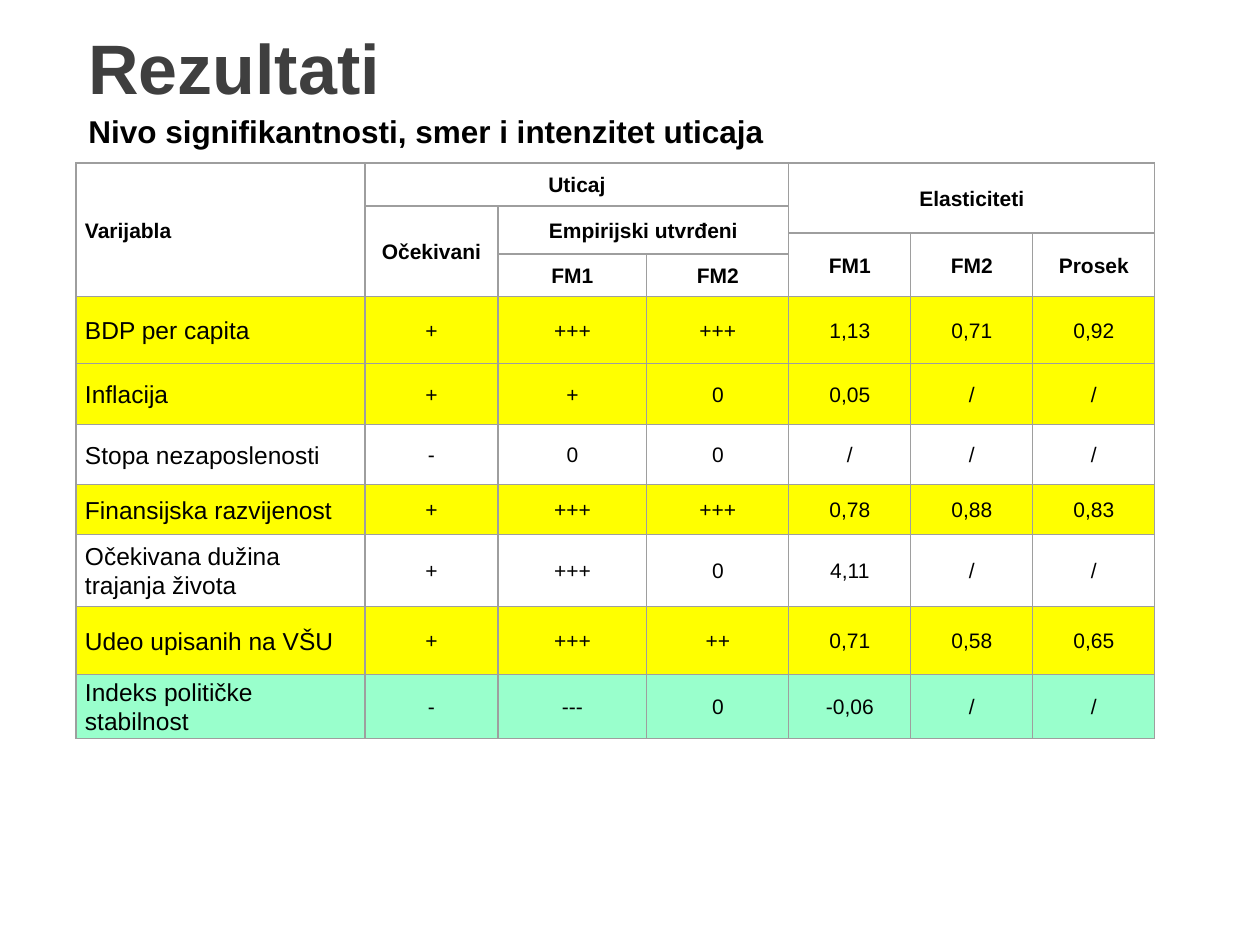
from itertools import product

from lxml.etree import SubElement
from pptx import Presentation
from pptx.dml.color import RGBColor
from pptx.enum.text import MSO_ANCHOR, PP_ALIGN
from pptx.oxml.ns import qn
from pptx.util import Pt

PX = 7257  # EMU per px, 126 px to the inch
COLORS = {
    "title": "3F3F3F", "text": "000000", "border": "9E9E9E",
    "plain": "FFFFFF", "both": "FFFF00", "partial": "99FFCC",
}

# Content: text, left, top, width, height, size, colour
HEADINGS = [
    ("Rezultati", 76, 18, 1068, 145, 40, "title"),
    ("Nivo signifikantnosti, smer i intenzitet uticaja", 76, 106, 1176, 50, 18, "text"),
]

# Header cells: text, row, column, rows spanned, columns spanned
HEADER = [
    ("Varijabla", 0, 0, 4, 1),
    ("Uticaj", 0, 1, 1, 3),
    ("Elasticiteti", 0, 4, 2, 3),
    ("Očekivani", 1, 1, 3, 1),
    ("Empirijski utvrđeni", 1, 2, 2, 2),
    ("FM1", 2, 4, 2, 1),
    ("FM2", 2, 5, 2, 1),
    ("Prosek", 2, 6, 2, 1),
    ("FM1", 3, 2, 1, 1),
    ("FM2", 3, 3, 1, 1),
]
HEADER_HEIGHTS = [43, 27, 21, 43]

# Result rows: fill, height, cells
RESULTS = [
    ("both", 67, ["BDP per capita", "+", "+++", "+++", "1,13", "0,71", "0,92"]),
    ("both", 61, ["Inflacija", "+", "+", "0", "0,05", "/", "/"]),
    ("plain", 60, ["Stopa nezaposlenosti", "-", "0", "0", "/", "/", "/"]),
    ("both", 50, ["Finansijska razvijenost", "+", "+++", "+++", "0,78", "0,88", "0,83"]),
    ("plain", 72, ["Očekivana dužina trajanja života", "+", "+++", "0", "4,11", "/", "/"]),
    ("both", 68, ["Udeo upisanih na VŠU", "+", "+++", "++", "0,71", "0,58", "0,65"]),
    ("partial", 64, ["Indeks političke stabilnost", "-", "---", "0", "-0,06", "/", "/"]),
]
COLUMN_WIDTHS = [289, 133, 149, 142, 122, 122, 122]
TABLE_LEFT, TABLE_TOP = 76, 163


def px(length):
    return length * PX


def rgb(name):
    return RGBColor.from_string(COLORS[name])


def write(paragraph, text, size, color="text", bold=False):
    run = paragraph.add_run()
    run.text = text
    run.font.color.rgb = rgb(color)
    for attribute, value in {"name": "Arial", "size": Pt(size), "bold": bold}.items():
        setattr(run.font, attribute, value)


def style_cell(cell, fill):
    margins = {"margin_left": px(9), "margin_right": px(9),
               "margin_top": 0, "margin_bottom": 0}
    for attribute, value in {**margins, "vertical_anchor": MSO_ANCHOR.MIDDLE}.items():
        setattr(cell, attribute, value)
    properties = cell._tc.get_or_add_tcPr()
    for side in ("lnL", "lnR", "lnT", "lnB"):
        line = SubElement(properties, qn(f"a:{side}"), w=str(Pt(0.75)))
        solid = SubElement(line, qn("a:solidFill"))
        SubElement(solid, qn("a:srgbClr"), val=COLORS["border"])
    cell.fill.solid()
    cell.fill.fore_color.rgb = rgb(fill)


def fill_cell(cell, text, column, size=12, bold=False):
    paragraph = cell.text_frame.paragraphs[0]
    paragraph.alignment = PP_ALIGN.CENTER if column else PP_ALIGN.LEFT
    paragraph.line_spacing = 1.07
    write(paragraph, text, size, bold=bold)


presentation = Presentation()
presentation.slide_width, presentation.slide_height = px(1260), px(945)
slide = presentation.slides.add_slide(presentation.slide_layouts[6])

# Title and subtitle
for text, left, top, width, height, size, color in HEADINGS:
    heading = slide.shapes.add_textbox(px(left), px(top), px(width), px(height))
    heading.text_frame.word_wrap = True
    write(heading.text_frame.paragraphs[0], text, size, color, bold=True)

# Table grid
heights = HEADER_HEIGHTS + [height for _, height, _ in RESULTS]
fills = ["plain"] * len(HEADER_HEIGHTS) + [fill for fill, _, _ in RESULTS]
table = slide.shapes.add_table(
    len(heights), len(COLUMN_WIDTHS), px(TABLE_LEFT), px(TABLE_TOP),
    px(sum(COLUMN_WIDTHS)), px(sum(heights))).table
table.first_row = table.horz_banding = False
for column, width in zip(table.columns, COLUMN_WIDTHS):
    column.width = px(width)
for row, height in zip(table.rows, heights):
    row.height = px(height)
for row, column in product(range(len(heights)), range(len(COLUMN_WIDTHS))):
    style_cell(table.cell(row, column), fills[row])

# Header
for text, row, column, row_span, column_span in HEADER:
    cell = table.cell(row, column)
    if row_span * column_span > 1:
        cell.merge(table.cell(row + row_span - 1, column + column_span - 1))
    fill_cell(cell, text, column, bold=True)

# Results
for row, (_, _, values) in enumerate(RESULTS, len(HEADER_HEIGHTS)):
    for column, value in enumerate(values):
        fill_cell(table.cell(row, column), value, column, size=12 if column else 14)

presentation.save("out.pptx")
